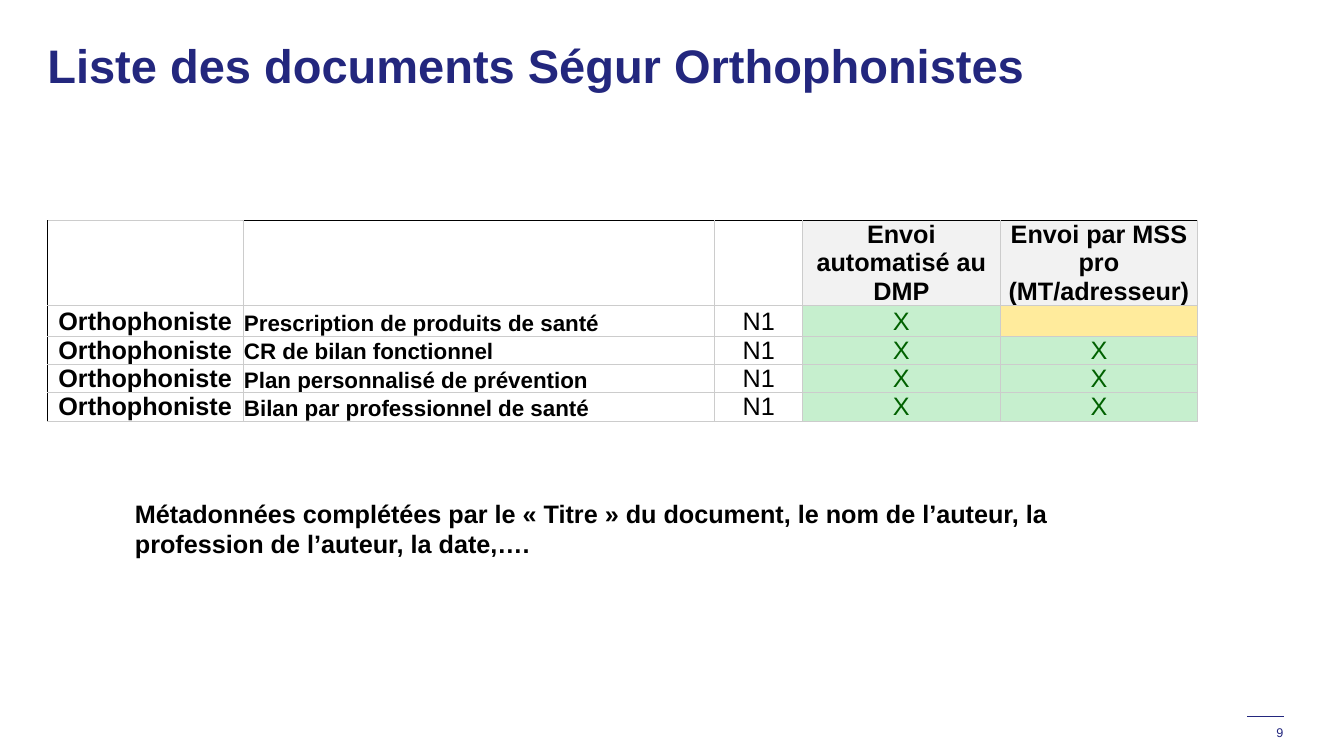
from typing import NamedTuple

from lxml import etree
from pptx import Presentation
from pptx.dml.color import RGBColor
from pptx.enum.shapes import MSO_CONNECTOR
from pptx.enum.text import MSO_ANCHOR, PP_ALIGN
from pptx.oxml.ns import qn
from pptx.util import Inches, Pt

LEFT, CENTER, RIGHT = PP_ALIGN.LEFT, PP_ALIGN.CENTER, PP_ALIGN.RIGHT
TOP, BOTTOM = MSO_ANCHOR.TOP, MSO_ANCHOR.BOTTOM
STRAIGHT = MSO_CONNECTOR.STRAIGHT

FONT = "Arial"
LINE_WIDTH = Pt(0.75)
COLORS = {
    "navy": "23277E",
    "black": "000000",
    "white": "FFFFFF",
    "grid": "CCCCCC",
    "header": "F2F2F2",
    "green": "C6EFCE",
    "dark_green": "006100",
    "yellow": "FFEB9C",
}


class TextStyle(NamedTuple):
    size: float
    color: str = "black"
    bold: bool = True
    align: PP_ALIGN = CENTER


class CellSpec(NamedTuple):
    text: str = ""
    style: TextStyle = TextStyle(18)
    fill: str | None = None
    anchor: MSO_ANCHOR = BOTTOM


class TextBox(NamedTuple):
    text: str
    left: float
    top: float
    width: float
    height: float
    style: TextStyle
    anchor: MSO_ANCHOR = BOTTOM
    inset_x: float = 0
    inset_y: float = 0


PLAIN = TextStyle(18, bold=False)
DOCUMENT = TextStyle(16, align=LEFT)
MARK = TextStyle(18, "dark_green", False)

SENT = CellSpec("X", MARK, "green")
NOT_SENT = CellSpec(fill="yellow")

HEADER = [
    CellSpec(),
    CellSpec(fill="white"),
    CellSpec(),
    CellSpec("Envoi automatisé au DMP", fill="header", anchor=TOP),
    CellSpec("Envoi par MSS pro (MT/adresseur)", fill="header"),
]
DOCUMENTS = [
    ("Prescription de produits de santé", NOT_SENT),
    ("CR de bilan fonctionnel", SENT),
    ("Plan personnalisé de prévention", SENT),
    ("Bilan par professionnel de santé", SENT),
]
COLUMN_WIDTHS = [1.94, 4.68, 0.87, 1.96, 1.96]
HEADER_HEIGHT, ROW_HEIGHT = 0.84, 0.28

TEXT_BOXES = [
    TextBox("9", 12.27, 7.12, 0.46, 0.22, TextStyle(9, "navy", False, RIGHT)),
    TextBox("Liste des documents Ségur Orthophonistes", 0.47, 0.3, 10.23, 0.62,
            TextStyle(33.6, "navy", align=LEFT)),
    TextBox("Métadonnées complétées par le « Titre » du document, le nom de "
            "l’auteur, la profession de l’auteur, la date,….",
            1.24, 4.89, 10.49, 0.71, TextStyle(18, align=LEFT), TOP, 0.1, 0.05),
]


def rgb(name: str) -> RGBColor:
    return RGBColor.from_string(COLORS[name])


def write_text(frame, text: str, style: TextStyle) -> None:
    para = frame.paragraphs[0]
    para.alignment = style.align
    span = para.add_run()
    span.text = text
    span.font.name = FONT
    span.font.size = Pt(style.size)
    span.font.bold = style.bold
    span.font.color.rgb = rgb(style.color)


def add_text_box(page, item: TextBox) -> None:
    box = page.shapes.add_textbox(Inches(item.left), Inches(item.top),
                                  Inches(item.width), Inches(item.height))
    frame = box.text_frame
    frame.word_wrap = True
    frame.vertical_anchor = item.anchor
    frame.margin_left = frame.margin_right = Inches(item.inset_x)
    frame.margin_top = frame.margin_bottom = Inches(item.inset_y)
    write_text(frame, item.text, item.style)


def add_border(cell, side: str, color: str) -> None:
    """Draw one edge of a cell; call in the order L, R, T, B, before any fill."""
    properties = cell._tc.get_or_add_tcPr()
    line = etree.SubElement(properties, qn(f"a:ln{side}"), w=str(int(LINE_WIDTH)))
    fill = etree.SubElement(line, qn("a:solidFill"))
    etree.SubElement(fill, qn("a:srgbClr"), val=COLORS[color])


def fill_cell(cell, item: CellSpec, row: int, column: int) -> None:
    cell.margin_left = cell.margin_right = Inches(0.01)
    cell.margin_top = cell.margin_bottom = 0
    cell.vertical_anchor = item.anchor
    dark_sides = {"L": column == 0, "T": row == 0 and column > 0}
    for side in "LRTB":
        add_border(cell, side, "black" if dark_sides.get(side) else "grid")
    if item.fill:
        cell.fill.solid()
        cell.fill.fore_color.rgb = rgb(item.fill)
    else:
        cell.fill.background()
    if item.text:
        write_text(cell.text_frame, item.text, item.style)


def add_document_table(page) -> None:
    rows = [HEADER] + [
        [CellSpec("Orthophoniste"), CellSpec(name, DOCUMENT, "white"),
         CellSpec("N1", PLAIN), SENT, mailing]
        for name, mailing in DOCUMENTS
    ]
    heights = [HEADER_HEIGHT] + [ROW_HEIGHT] * len(DOCUMENTS)
    table = page.shapes.add_table(
        len(rows), len(COLUMN_WIDTHS), Inches(0.47), Inches(2.19),
        Inches(sum(COLUMN_WIDTHS)), Inches(sum(heights))).table
    table.first_row = table.horz_banding = False
    for column, width in zip(table.columns, COLUMN_WIDTHS):
        column.width = Inches(width)
    for row, height in zip(table.rows, heights):
        row.height = Inches(height)
    for row_index, items in enumerate(rows):
        for column_index, item in enumerate(items):
            fill_cell(table.cell(row_index, column_index), item,
                      row_index, column_index)


def add_footer_rule(page) -> None:
    rule = page.shapes.add_connector(STRAIGHT, Inches(12.73), Inches(7.11),
                                     Inches(12.37), Inches(7.11))
    rule.line.color.rgb = rgb("navy")
    rule.line.width = LINE_WIDTH
    etree.SubElement(rule._element.spPr, qn("a:effectLst"))


def main() -> None:
    deck = Presentation()
    deck.slide_width, deck.slide_height = Inches(13.33), Inches(7.5)
    page = deck.slides.add_slide(deck.slide_layouts[6])
    page.background.fill.solid()
    page.background.fill.fore_color.rgb = rgb("white")
    add_footer_rule(page)
    add_document_table(page)
    for item in TEXT_BOXES:
        add_text_box(page, item)
    deck.save("out.pptx")


if __name__ == "__main__":
    main()
